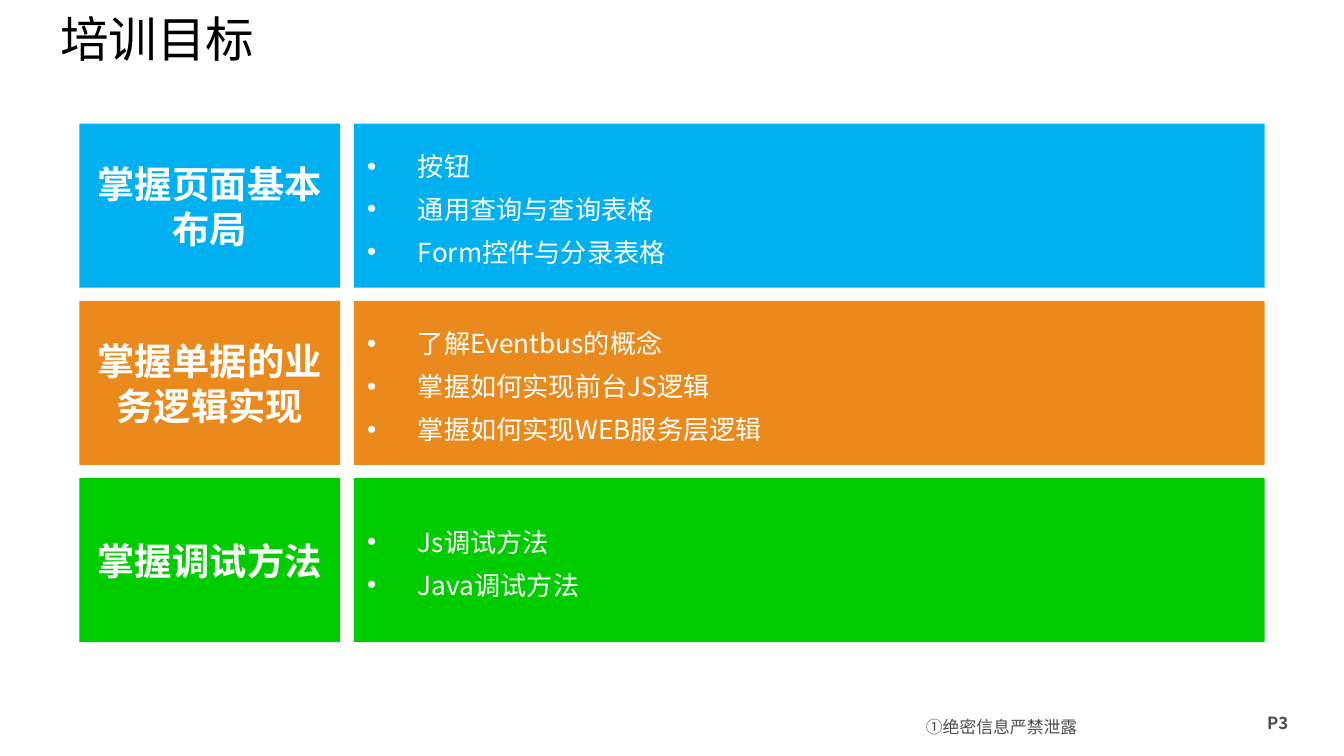
from lxml.etree import SubElement
from pptx import Presentation
from pptx.dml.color import RGBColor
from pptx.enum.shapes import MSO_SHAPE
from pptx.enum.text import MSO_ANCHOR, PP_ALIGN
from pptx.oxml.ns import qn
from pptx.util import Cm, Pt

FONT = "Noto Sans CJK SC"
WHITE = RGBColor(0xFF, 0xFF, 0xFF)
BLACK = RGBColor(0x00, 0x00, 0x00)
GRAY = RGBColor(0x4D, 0x4D, 0x4D)
BLUE = RGBColor(0x00, 0xB0, 0xF0)
ORANGE = RGBColor(0xEA, 0x8A, 0x1C)
GREEN = RGBColor(0x00, 0xCC, 0x00)

GOALS = [
    (BLUE, "掌握页面基本布局", ["按钮", "通用查询与查询表格", "Form控件与分录表格"]),
    (ORANGE, "掌握单据的业务逻辑实现",
     ["了解Eventbus的概念", "掌握如何实现前台JS逻辑", "掌握如何实现WEB服务层逻辑"]),
    (GREEN, "掌握调试方法", ["Js调试方法", "Java调试方法"]),
]


def add_bullet(para):
    """Give a paragraph a hanging round bullet."""
    props = para._p.get_or_add_pPr()
    props.set("marL", str(Cm(0.96)))
    props.set("indent", str(-Cm(0.96)))
    SubElement(props, qn("a:buFont"), typeface="Arial")
    SubElement(props, qn("a:buChar"), char="•")


def write(shape, lines, size, color=WHITE, bold=False, align=PP_ALIGN.LEFT,
          anchor=MSO_ANCHOR.MIDDLE, spacing=None, bullet=False):
    """Fill a shape with formatted paragraphs."""
    frame = shape.text_frame
    frame.word_wrap = True
    frame.vertical_anchor = anchor
    for i, line in enumerate(lines):
        para = frame.add_paragraph() if i else frame.paragraphs[0]
        para.alignment = align
        if spacing:
            para.line_spacing = spacing
        if i:
            para.space_before = Pt(size * 0.2)
        if bullet:
            add_bullet(para)
        run = para.add_run()
        run.text = line
        font = run.font
        font.name, font.size, font.bold = FONT, Pt(size), bold
        font.color.rgb = color
        SubElement(run._r.get_or_add_rPr(), qn("a:ea"), typeface=FONT)


def add_block(slide, left, top, width, height, color):
    """Draw a plain filled rectangle."""
    block = slide.shapes.add_shape(MSO_SHAPE.RECTANGLE, left, top, width, height)
    block.shadow.inherit = False
    block.fill.solid()
    block.fill.fore_color.rgb = color
    block.line.fill.background()
    return block


def add_title(slide, left, top, width, height):
    """Place the slide title."""
    box = slide.shapes.add_textbox(left, top, width, height)
    write(box, ["培训目标"], 26, color=BLACK)


def add_goal(slide, left, top, width, height, color, head, items):
    """Place one goal row: a heading block and its list block."""
    side, gap = Cm(4.93), Cm(0.26)
    label = add_block(slide, left, top, side, height, color)
    write(label, [head], 20, bold=True, align=PP_ALIGN.CENTER)
    start = side + gap
    body = add_block(slide, left + start, top, width - start, height, color)
    write(body, items, 14, spacing=1.2, bullet=True)


def add_footer(slide, left, top, width, height):
    """Place the secrecy note and the page number."""
    note = slide.shapes.add_textbox(left, top + Cm(0.07), Cm(4.5), height)
    frame = note.text_frame
    frame.margin_left = frame.margin_right = Cm(0.2)
    frame.margin_top = frame.margin_bottom = Cm(0.03)
    write(note, ["①绝密信息严禁泄露"], 9, color=GRAY, align=PP_ALIGN.JUSTIFY,
          anchor=MSO_ANCHOR.TOP, spacing=Pt(14))
    side = Cm(1.42)
    page = slide.shapes.add_textbox(left + width - side, top, side, height)
    write(page, ["P3"], 9, color=GRAY, bold=True, anchor=MSO_ANCHOR.TOP)


def main():
    """Build the slide and save it."""
    deck = Presentation()
    deck.slide_width, deck.slide_height = Cm(25.4), Cm(14.29)
    slide = deck.slides.add_slide(deck.slide_layouts[6])
    add_title(slide, Cm(0.89), Cm(0), Cm(19.8), Cm(1.45))
    for i, goal in enumerate(GOALS):
        add_goal(slide, Cm(1.5), Cm(2.34 + 3.35 * i), Cm(22.4), Cm(3.1), *goal)
    add_footer(slide, Cm(17.3), Cm(13.34), Cm(7.82), Cm(0.65))
    deck.save("out.pptx")


if __name__ == "__main__":
    main()
